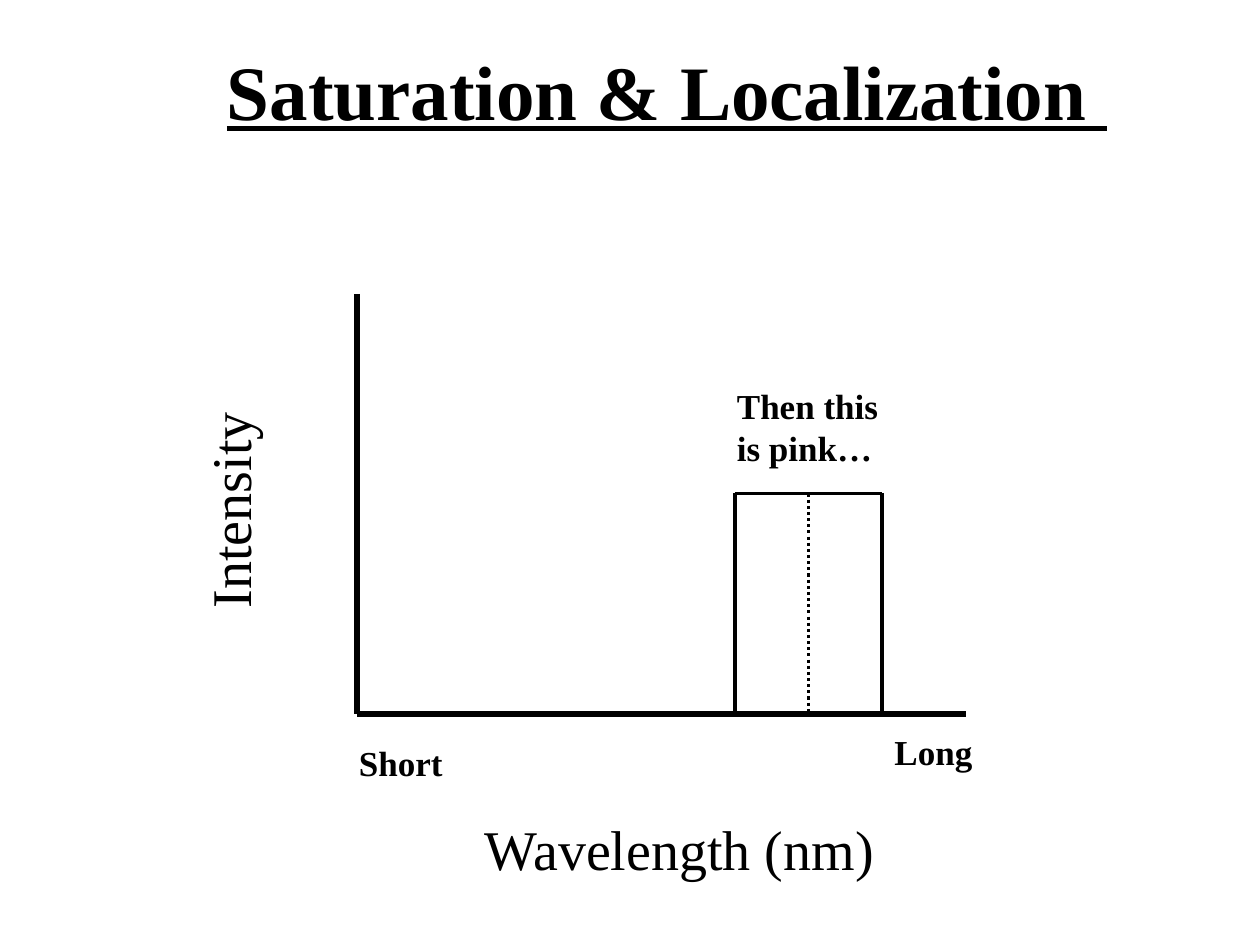
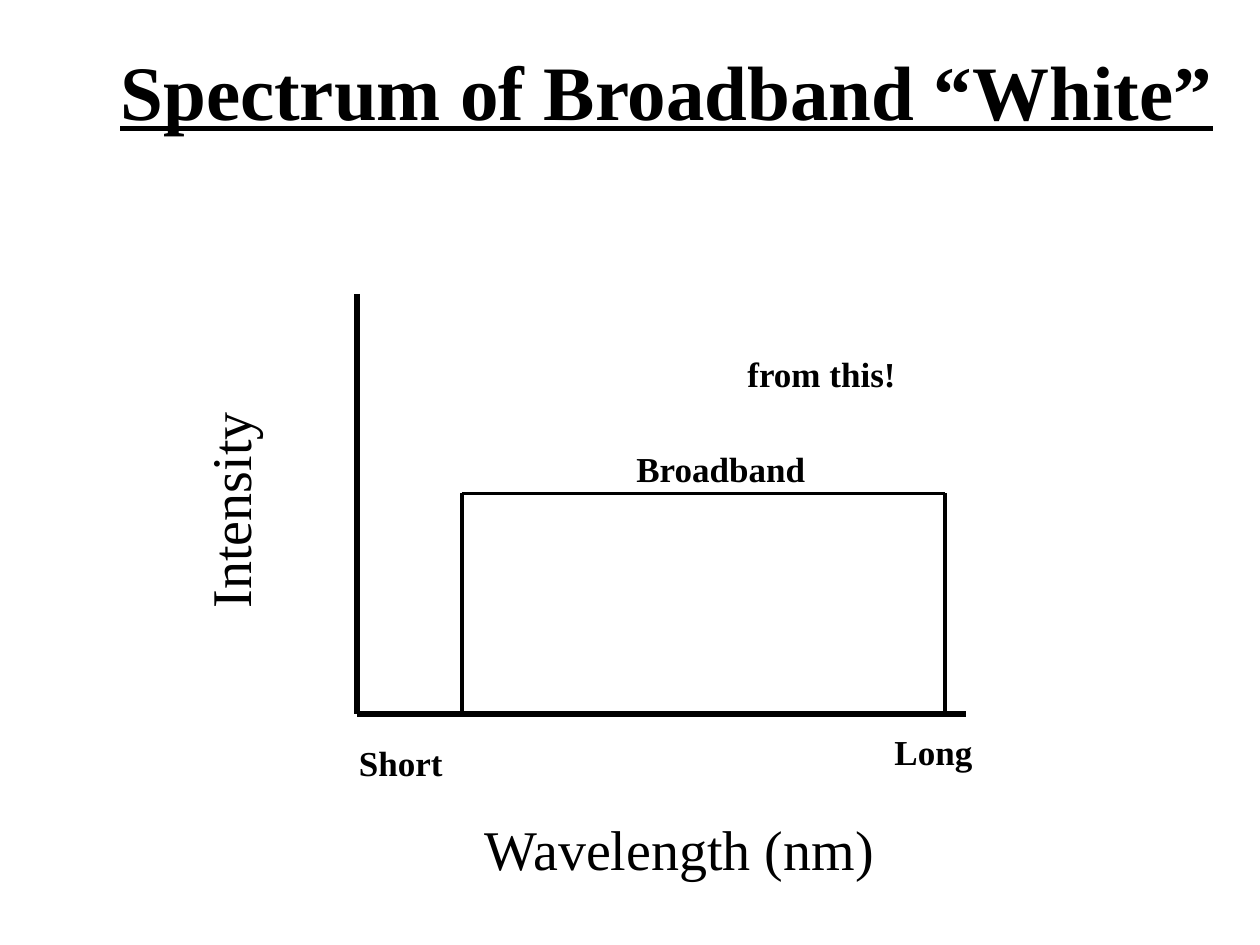
from lxml import etree
from pptx import Presentation
from pptx import util as u
from pptx.dml import color
from pptx.enum import dml, shapes, text
from pptx.oxml import ns

Pt = u.Pt
HUES = {"ink": "000000", "page": "FFFFFF"}
FONT = "Times New Roman"
LEFT, RIGHT, TOP, BASE = 204, 552, 168, 408
PEAK = 282


class Deck:
    def __init__(self):
        self.prs = Presentation()
        self.prs.slide_width = Pt(720)
        self.prs.slide_height = Pt(540)
        self.slide = None

    def hue(self, name):
        return color.RGBColor.from_string(HUES[name])

    def page(self, title):
        self.slide = self.prs.slides.add_slide(self.prs.slide_layouts[5])
        fill = self.slide.background.fill
        fill.solid()
        fill.fore_color.rgb = self.hue("page")
        head = self.slide.shapes.title
        head.left, head.top, head.width, head.height = map(Pt, (60, 12, 642, 78))
        frame = head.text_frame
        frame.auto_size = text.MSO_AUTO_SIZE.NONE
        frame.vertical_anchor = text.MSO_ANCHOR.MIDDLE
        para = frame.paragraphs[0]
        para.alignment = text.PP_ALIGN.CENTER
        self.run(para, title, 44, bold=True, under=True)

    def run(self, para, words, size, bold=False, under=False):
        run = para.add_run()
        run.text = words
        font = run.font
        font.name, font.size = FONT, Pt(size)
        font.bold, font.underline = bold, under
        font.color.rgb = self.hue("ink")

    def label(self, lines, x, y, w, h, size=20, bold=True, turn=0):
        box = self.slide.shapes.add_textbox(Pt(x), Pt(y), Pt(w), Pt(h))
        box.rotation = turn
        frame = box.text_frame
        frame.word_wrap = False
        frame.auto_size = text.MSO_AUTO_SIZE.SHAPE_TO_FIT_TEXT
        for i, words in enumerate(lines):
            para = frame.add_paragraph() if i else frame.paragraphs[0]
            self.run(para, words, size, bold)

    def line(self, x1, y1, x2, y2, width=1.75, dash=None):
        link = self.slide.shapes.add_connector(
            shapes.MSO_CONNECTOR.STRAIGHT, Pt(x1), Pt(y1), Pt(x2), Pt(y2))
        link.line.width = Pt(width)
        link.line.color.rgb = self.hue("ink")
        if dash:
            link.line.dash_style = dash
        props = link.element.find(ns.qn("p:spPr"))
        etree.SubElement(props, ns.qn("a:effectLst"))

    def axes(self):
        self.line(LEFT, TOP, LEFT, BASE, 3)
        self.line(LEFT, BASE, RIGHT, BASE, 3)
        self.label(["Intensity"], 67.5, 268.5, 127, 45.5, 32, False, 270)
        self.label(["Wavelength (nm)"], 270, 462, 239, 45.5, 32, False)
        self.label(["Short"], 198, 420, 64, 31)
        self.label(["Long"], 504, 414, 60, 31)

    def band(self, low, high):
        for x in (low, high):
            self.line(x, PEAK, x, BASE)
        self.line(low, PEAK, high, PEAK)


def main():
    deck = Deck()

    deck.page("Saturation & Localization ")
    deck.axes()
    low, high = 420, 504
    mid = (low + high) / 2
    deck.band(low, high)
    deck.line(mid, PEAK, mid, BASE, dash=dml.MSO_LINE.ROUND_DOT)
    deck.label(["Then this", "is pink…"], 414, 216, 96, 55.5)

    deck.page("Spectrum of Broadband “White” ")
    deck.axes()
    deck.band(264, 540)
    deck.label(["from this!"], 420, 198, 100, 31)
    deck.label(["Broadband"], 356.5, 252, 112, 31)

    deck.prs.save("out.pptx")


if __name__ == "__main__":
    main()
